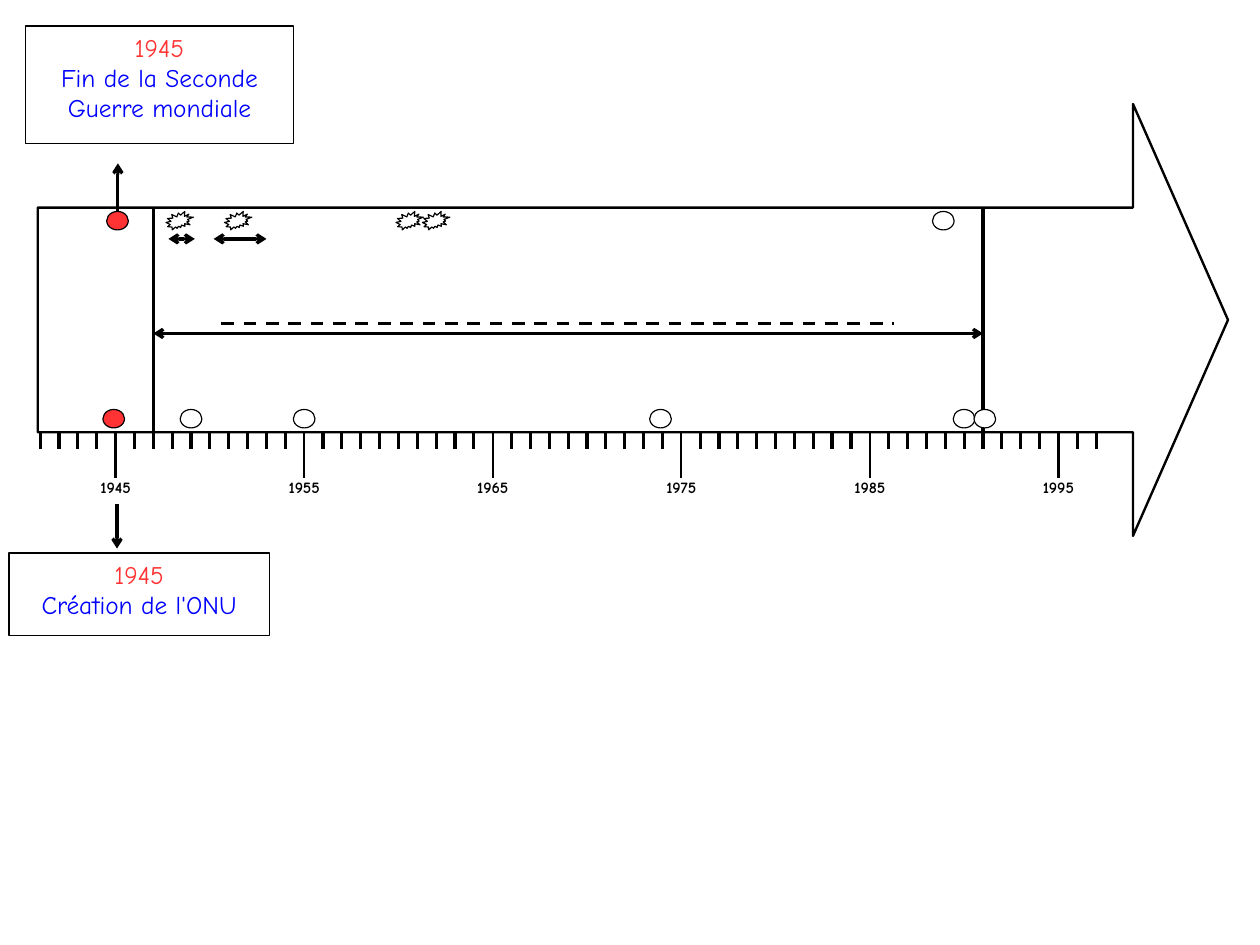
import pptx
import pptx.util
import pptx.dml.color
import pptx.enum.dml
import pptx.enum.shapes
import pptx.enum.text
import pptx.oxml.ns
from lxml import etree

Cm, Pt = pptx.util.Cm, pptx.util.Pt
Kind = pptx.enum.shapes.MSO_SHAPE
qn = pptx.oxml.ns.qn

BLACK = pptx.dml.color.RGBColor(0x00, 0x00, 0x00)
WHITE = pptx.dml.color.RGBColor(0xFF, 0xFF, 0xFF)
RED = pptx.dml.color.RGBColor(0xFF, 0x33, 0x33)
BLUE = pptx.dml.color.RGBColor(0x00, 0x00, 0xFF)

# Band edges, and rows of marks inside the band
TOP, BASE = 4.6, 9.6
HIGH, LOW = 4.9, 9.3


def year_x(year):
    return 2.57 + 0.419 * (year - 1945)


class Frieze:
    font = "Comic Neue"

    def __init__(self, slide):
        self.items = slide.shapes

    def shape(self, kind, left, top, width, height, fill=WHITE, weight=0):
        shape = self.items.add_shape(kind, Cm(left), Cm(top), Cm(width), Cm(height))
        shape.shadow.inherit = False
        if fill is None:
            shape.fill.background()
        else:
            shape.fill.solid()
            shape.fill.fore_color.rgb = fill
        shape.line.color.rgb = BLACK
        shape.line.width = Pt(weight)
        return shape

    def mark(self, kind, year, y, width, fill=WHITE):
        self.shape(kind, year_x(year) - width / 2, y - 0.2, width, 0.41, fill)

    def line(self, x1, y1, x2, y2, weight=0, ends=(), dash=None):
        line = self.items.add_connector(
            pptx.enum.shapes.MSO_CONNECTOR.STRAIGHT, Cm(x1), Cm(y1), Cm(x2), Cm(y2))
        line.line.color.rgb = BLACK
        line.line.width = Pt(weight)
        if dash:
            line.line.dash_style = dash
        props = line._element.spPr
        for end in ends:
            etree.SubElement(props.find(qn("a:ln")), qn(end), type="arrow")
        etree.SubElement(props, qn("a:effectLst"))

    def text(self, shape, rows, size, bold=False, wrap=False):
        frame = shape.text_frame
        frame.word_wrap = wrap
        frame.vertical_anchor = pptx.enum.text.MSO_ANCHOR.TOP
        for i, (words, color) in enumerate(rows):
            para = frame.add_paragraph() if i else frame.paragraphs[0]
            para.alignment = pptx.enum.text.PP_ALIGN.CENTER
            run = para.add_run()
            run.text = words
            run.font.name = self.font
            run.font.size = Pt(size)
            run.font.bold = bold
            run.font.color.rgb = color

    def label(self, year):
        box = self.items.add_textbox(Cm(year_x(year) - 2.98), Cm(10.49), Cm(5.96), Cm(0.81))
        self.text(box, [(str(year), BLACK)], 10, bold=True)

    def event(self, left, top, width, height, year, words, wrap):
        box = self.shape(Kind.RECTANGLE, left, top, width, height)
        self.text(box, [(year, RED), (words, BLUE)], 16, wrap=wrap)


def main():
    deck = pptx.Presentation()
    deck.slide_width, deck.slide_height = Cm(28), Cm(21)
    frieze = Frieze(deck.slides.add_slide(deck.slide_layouts[6]))
    both = ("a:headEnd", "a:tailEnd")

    # Time arrow
    arrow = frieze.shape(Kind.RIGHT_ARROW, 0.84, 2.31, 26.45, 9.6, None, 1.5)
    arrow.adjustments[0] = 0.52
    arrow.adjustments[1] = 0.22

    # Scale: one tick a year, a long one with its label every ten years
    for year in range(1941, 1998):
        x = year_x(year)
        if year % 10 == 5:
            frieze.line(x, 10.62, x, BASE, 1.5)
            frieze.label(year)
        else:
            frieze.line(x, BASE, x, 9.98)

    # Period limits and spans
    for year in (1947, 1991):
        frieze.line(year_x(year), TOP, year_x(year), BASE)
    for start, end, y in ((1947.8, 1949.2, 5.31), (1950.2, 1953, 5.31), (1947, 1991, 7.41)):
        frieze.line(year_x(start), y, year_x(end), y, ends=both)
    frieze.line(year_x(1950.6), 7.19, year_x(1986.3), 7.19,
                dash=pptx.enum.dml.MSO_LINE.DASH)

    # Links to the events
    frieze.line(2.62, 4.7, 2.62, 3.63, ends=both[1:])
    frieze.line(2.6, 11.2, 2.6, 12.19, ends=both[1:])

    # Dates and crises
    for y, years in ((HIGH, (1945.1, 1988.9)),
                     (LOW, (1944.9, 1949, 1955, 1973.9, 1990, 1991.1))):
        for year in years:
            frieze.mark(Kind.OVAL, year, y, 0.48, RED if year < 1946 else WHITE)
    for year in (1948.4, 1951.5, 1960.6, 1962):
        frieze.mark(Kind.EXPLOSION2, year, HIGH, 0.61)

    # Events
    frieze.event(0.56, 0.58, 5.97, 2.62, "1945", "Fin de la Seconde Guerre mondiale", True)
    frieze.event(0.2, 12.29, 5.79, 1.83, "1945", "Création de l'ONU", False)

    deck.save("out.pptx")


if __name__ == "__main__":
    main()
